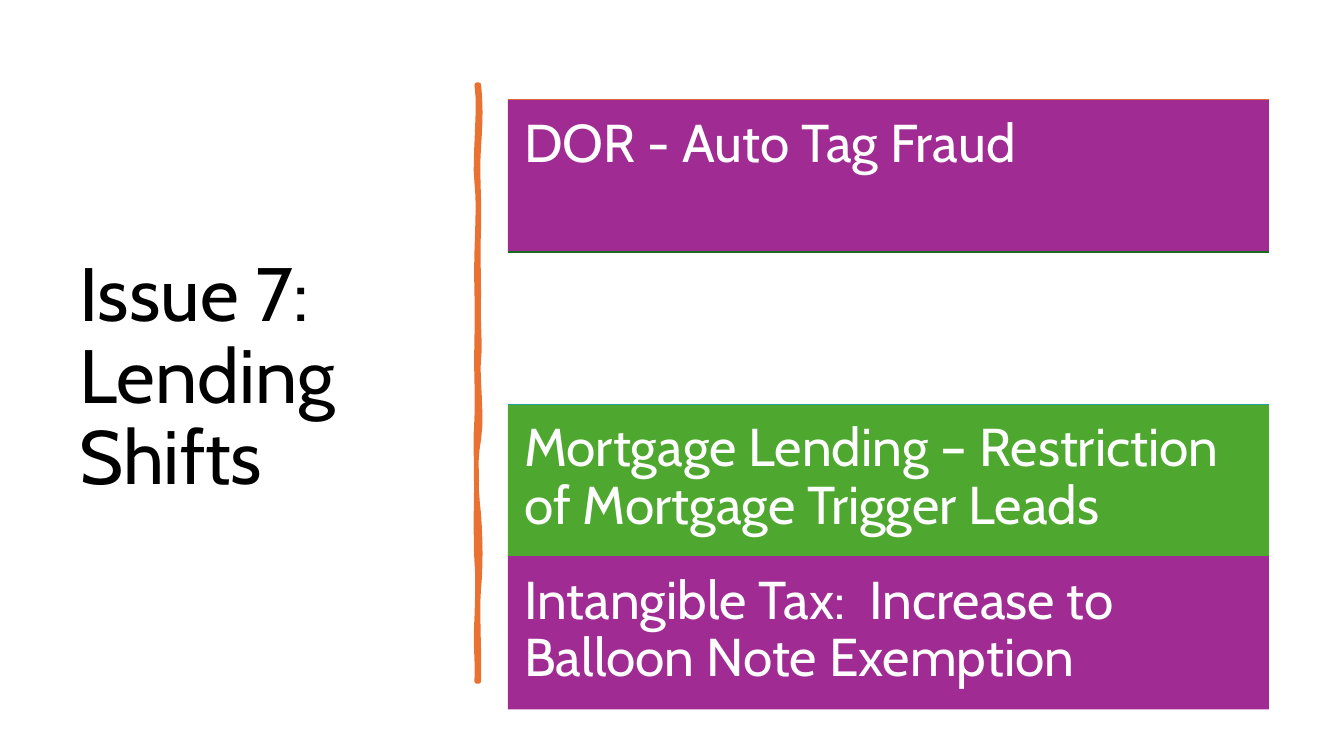
from lxml import etree
from pptx import Presentation
from pptx import util as u
from pptx.dml.color import RGBColor
from pptx.enum import shapes, text
from pptx.oxml.ns import qn

HUES = {"ink": "000000", "paper": "FFFFFF", "orange": "E97132",
        "purple": "A02B93", "forest": "196B24", "blue": "0F9ED5",
        "green": "4EA72E"}
TITLE = "Issue 7:  Lending Shifts"
ROWS = [
    ("DOR - Auto Tag Fraud", "orange", "purple"),
    ("", "forest", None),
    ("Mortgage Lending – Restriction of Mortgage Trigger Leads",
     "blue", "green"),
    ("Intangible Tax:  Increase to Balloon Note Exemption",
     "purple", "purple"),
]
LEFT, TOP, WIDE, HIGH = 12.8, 2.52, 19.18, 3.84
STROKE = [
    (475, 84), (477, 102), (477, 119), (475, 146), (473, 173), (476, 195),
    (475, 226), (474, 257), (475, 262), (475, 294), (474, 325), (477, 342),
    (475, 356), (473, 370), (479, 414), (475, 436), (471, 457), (472, 484),
    (475, 510), (477, 536), (477, 564), (475, 584), (473, 603), (476, 650),
    (475, 676), (474, 676), (473, 676), (473, 676), (474, 646), (471, 644),
    (473, 613), (474, 583), (474, 570), (473, 557), (472, 544), (472, 495),
    (473, 477), (473, 459), (471, 445), (473, 415), (474, 386), (472, 373),
    (473, 335), (474, 298), (472, 281), (473, 250), (474, 218), (475, 200),
    (473, 181), (470, 163), (477, 104), (473, 84), (474, 84), (474, 84),
    (475, 84),
]
UNIT, STEPS = 0.0254, 6


def hue(name):
    return RGBColor.from_string(HUES[name])


def write(shape, words, size, color, inset, anchor):
    frame = shape.text_frame
    frame.word_wrap = True
    frame.vertical_anchor = anchor
    frame.margin_left = frame.margin_right = u.Cm(inset[0])
    frame.margin_top = frame.margin_bottom = u.Cm(inset[1])
    para = frame.paragraphs[0]
    para.alignment = text.PP_ALIGN.LEFT
    para.line_spacing = 0.9
    run = para.add_run()
    run.text = words
    run.font.name = "Cabin"
    run.font.size = u.Pt(size)
    run.font.color.rgb = hue(color)


def curve(knots):
    for i in range(0, len(knots) - 1, 3):
        for step in range(1, STEPS + 1):
            t = step / STEPS
            mix = ((1 - t) ** 3, 3 * t * (1 - t) ** 2,
                   3 * t * t * (1 - t), t ** 3)
            yield tuple(
                u.Cm(UNIT * sum(m * k[axis] for m, k in zip(mix, knots[i:])))
                for axis in (0, 1))


def draw_brush(slide):
    start = [u.Cm(UNIT * v) for v in STROKE[0]]
    pen = slide.shapes.build_freeform(*start)
    pen.add_line_segments(list(curve(STROKE)), close=True)
    brush = pen.convert_to_shape()
    brush.shadow.inherit = False
    brush.fill.solid()
    brush.fill.fore_color.rgb = hue("orange")
    brush.line.color.rgb = hue("orange")
    brush.line.width = u.Pt(3.25)


def draw_row(slide, top, words, edge, fill):
    x, y = u.Cm(LEFT), u.Cm(top)
    rule = slide.shapes.add_connector(
        shapes.MSO_CONNECTOR.STRAIGHT, x, y, u.Cm(LEFT + WIDE), y)
    rule.line.color.rgb = hue(edge)
    rule.line.width = u.Pt(1.5)
    etree.SubElement(rule._element.spPr, qn("a:effectLst"))
    if not fill:
        return
    box = slide.shapes.add_shape(
        shapes.MSO_SHAPE.RECTANGLE, x, y, u.Cm(WIDE), u.Cm(HIGH))
    box.shadow.inherit = False
    box.fill.solid()
    box.fill.fore_color.rgb = hue(fill)
    box.line.fill.background()
    write(box, words, size=38, color="paper", inset=(0.41, 0.41),
          anchor=text.MSO_ANCHOR.TOP)


def main():
    """Build the lending shifts slide."""
    deck = Presentation()
    deck.slide_width, deck.slide_height = u.Cm(33.87), u.Cm(19.05)
    slide = deck.slides.add_slide(deck.slide_layouts[6])
    title = slide.shapes.add_textbox(
        u.Cm(1.75), u.Cm(1.78), u.Cm(9.5), u.Cm(15.52))
    write(title, TITLE, size=54, color="ink", inset=(0.25, 0.13),
          anchor=text.MSO_ANCHOR.MIDDLE)
    draw_brush(slide)
    for i, row in enumerate(ROWS):
        draw_row(slide, TOP + i * HIGH, *row)
    deck.save("out.pptx")


if __name__ == "__main__":
    main()
